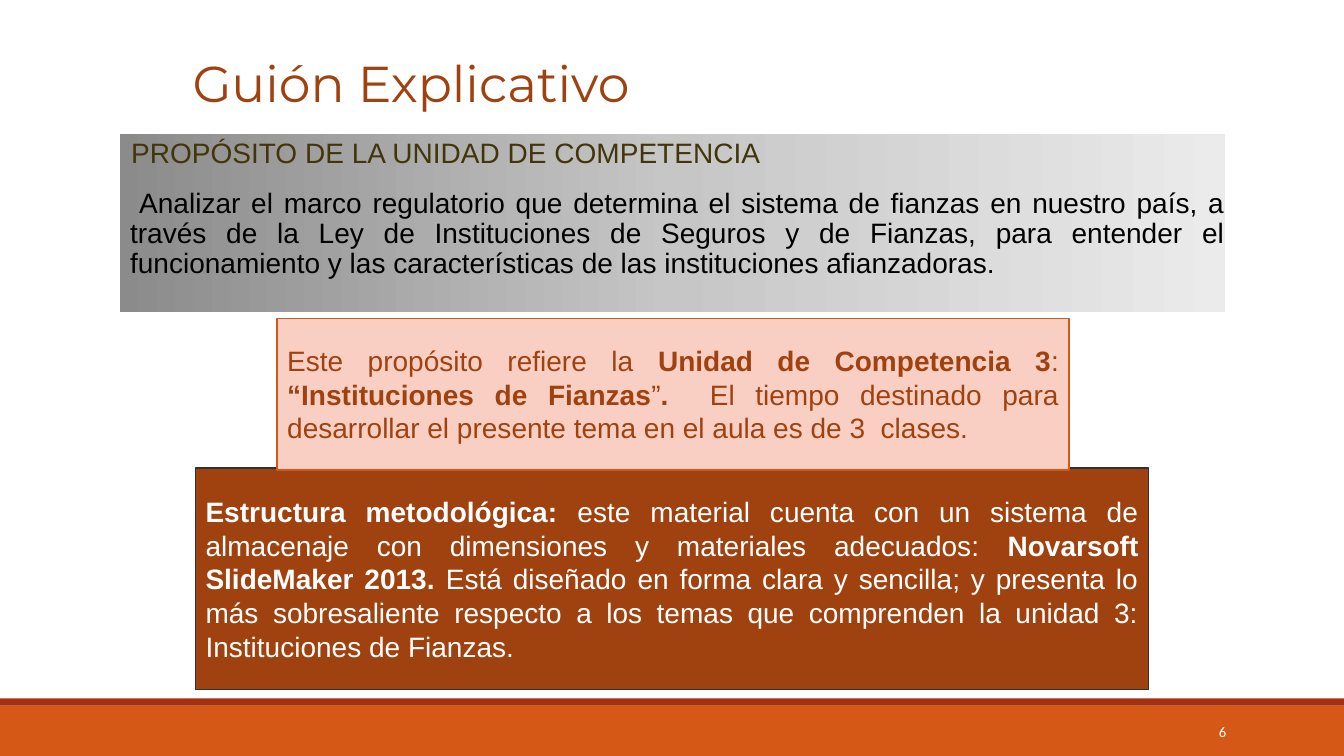
import copy

import pptx
import pptx.dml.color
import pptx.enum.shapes
import pptx.enum.text
import pptx.oxml.ns
import pptx.util
from lxml import etree

Inches, Pt = pptx.util.Inches, pptx.util.Pt
RGBColor = pptx.dml.color.RGBColor
ALIGN, ANCHOR = pptx.enum.text.PP_ALIGN, pptx.enum.text.MSO_ANCHOR

# Colours
WHITE = RGBColor(0xFF, 0xFF, 0xFF)
BLACK = RGBColor(0, 0, 0)
OLIVE = RGBColor(0x41, 0x35, 0x09)
CHARCOAL = RGBColor(0x32, 0x32, 0x32)
ORANGE = RGBColor(0xD5, 0x58, 0x16)
RED = RGBColor(0xA5, 0x30, 0x0F)
BROWN = RGBColor(0xA0, 0x42, 0x10)
PEACH = RGBColor(0xF9, 0xCF, 0xC3)
GREYS = [(0, RGBColor(0x8B, 0x8B, 0x8B)), (0.5, RGBColor(0xC6, 0xC6, 0xC6)),
         (1, RGBColor(0xEB, 0xEB, 0xEB))]

# Content: text spans are (text, bold)
TITLE = "Guión Explicativo"
PAGE_NUMBER = "6"
PURPOSE = [  # text, colour, first-line indent
    ("PROPÓSITO DE LA UNIDAD DE COMPETENCIA", OLIVE, 0.01),
    ("Analizar el marco regulatorio que determina el sistema de fianzas en nuestro país, "
     "a través de la Ley de Instituciones de Seguros y de Fianzas, para entender el "
     "funcionamiento y las características de las instituciones afianzadoras.", BLACK, 0.09),
]
STRUCTURE = [
    ("Estructura metodológica:", True),
    (" este material cuenta con un sistema de almacenaje con dimensiones y materiales "
     "adecuados: ", False),
    ("Novarsoft SlideMaker 2013. ", True),
    ("Está diseñado en forma clara y sencilla; y presenta lo más sobresaliente respecto a "
     "los temas que comprenden la unidad 3: Instituciones de Fianzas.", False),
]
UNIT = [
    ("Este propósito refiere la ", False), ("Unidad de Competencia 3", True),
    (": ", False), ("“Instituciones de Fianzas", True), ("”", False), (". ", True),
    (" El tiempo destinado para desarrollar el presente tema en el aula es de 3  clases.",
     False),
]
BANDS = [((0, 7, 13.33, 0.5), ORANGE), ((0, 6.93, 13.33, 0.07), RED)]
PANELS = [  # position, fill, line, text colour, spans
    ((1.94, 4.64, 9.45, 2.2), BROWN, CHARCOAL, WHITE, STRUCTURE),
    ((2.75, 3.16, 7.85, 1.5), PEACH, ORANGE, BROWN, UNIT),
]


def place(shape, position):
    shape.left, shape.top, shape.width, shape.height = map(Inches, position)


def style(para, name, size, color, align):
    para.alignment = align
    para.font.name, para.font.size = name, Pt(size)
    para.font.color.rgb = color


def add_rectangle(page, position, fill):
    shape = page.shapes.add_shape(pptx.enum.shapes.MSO_SHAPE.RECTANGLE,
                                  *map(Inches, position))
    shape.shadow.inherit = False
    shape.fill.solid()
    shape.fill.fore_color.rgb = fill
    shape.line.fill.background()
    return shape


def fill_gradient(shape, colors):
    shape.fill.gradient()
    shape.fill.gradient_angle = 0
    stops = shape.fill._fill._gradFill.gsLst
    stops.append(copy.deepcopy(stops[-1]))
    for stop, (position, color) in zip(shape.fill.gradient_stops, colors):
        stop.position, stop.color.rgb = position, color


def add_purpose(body):
    place(body, (1.19, 1.33, 10.96, 1.77))
    fill_gradient(body, GREYS)
    frame = body.text_frame
    frame.auto_size = pptx.enum.text.MSO_AUTO_SIZE.NONE
    frame.vertical_anchor = ANCHOR.TOP
    frame.margin_left = frame.margin_right = 0
    frame.text = "\n".join(text for text, _, _ in PURPOSE)
    for para, (_, color, indent) in zip(frame.paragraphs, PURPOSE):
        para.line_spacing, para.space_before, para.space_after = 0.9, Pt(12), Pt(2)
        properties = para._p.get_or_add_pPr()
        properties.set("marL", str(Inches(0.1)))
        properties.set("indent", str(Inches(indent)))
        etree.SubElement(properties, pptx.oxml.ns.qn("a:buNone"))
        style(para, "Arial", 20, color, ALIGN.JUSTIFY)


def add_panel(page, position, fill, line, color, spans):
    panel = add_rectangle(page, position, fill)
    panel.line.color.rgb, panel.line.width = line, Pt(1.25)
    panel.text_frame.word_wrap = True
    panel.text_frame.vertical_anchor = ANCHOR.MIDDLE
    para = panel.text_frame.paragraphs[0]
    style(para, "Arial", 20, color, ALIGN.JUSTIFY)
    for text, bold in spans:
        span = para.add_run()
        span.text, span.font.bold = text, bold


def main():
    deck = pptx.Presentation()
    deck.slide_width, deck.slide_height = Inches(13.33), Inches(7.5)
    page = deck.slides.add_slide(deck.slide_layouts[1])

    # Footer bands and page number
    for position, color in BANDS:
        add_rectangle(page, position, color)
    number = page.shapes.add_textbox(*map(Inches, (10.83, 7.06, 1.43, 0.4)))
    number.text_frame.vertical_anchor = ANCHOR.MIDDLE
    number.text_frame.word_wrap = True
    number.text_frame.text = PAGE_NUMBER
    style(number.text_frame.paragraphs[0], "Calibri", 10.5, WHITE, ALIGN.RIGHT)

    # Title, purpose and the two panels
    title = page.shapes.title
    place(title, (1.81, 0.47, 5.03, 0.71))
    title.text_frame.text = TITLE
    title.text_frame.vertical_anchor = ANCHOR.TOP
    title.text_frame.auto_size = pptx.enum.text.MSO_AUTO_SIZE.NONE
    style(title.text_frame.paragraphs[0], "Montserrat", 36, BROWN, ALIGN.LEFT)
    add_purpose(page.placeholders[1])
    for panel in PANELS:
        add_panel(page, *panel)

    deck.save("out.pptx")


if __name__ == "__main__":
    main()
